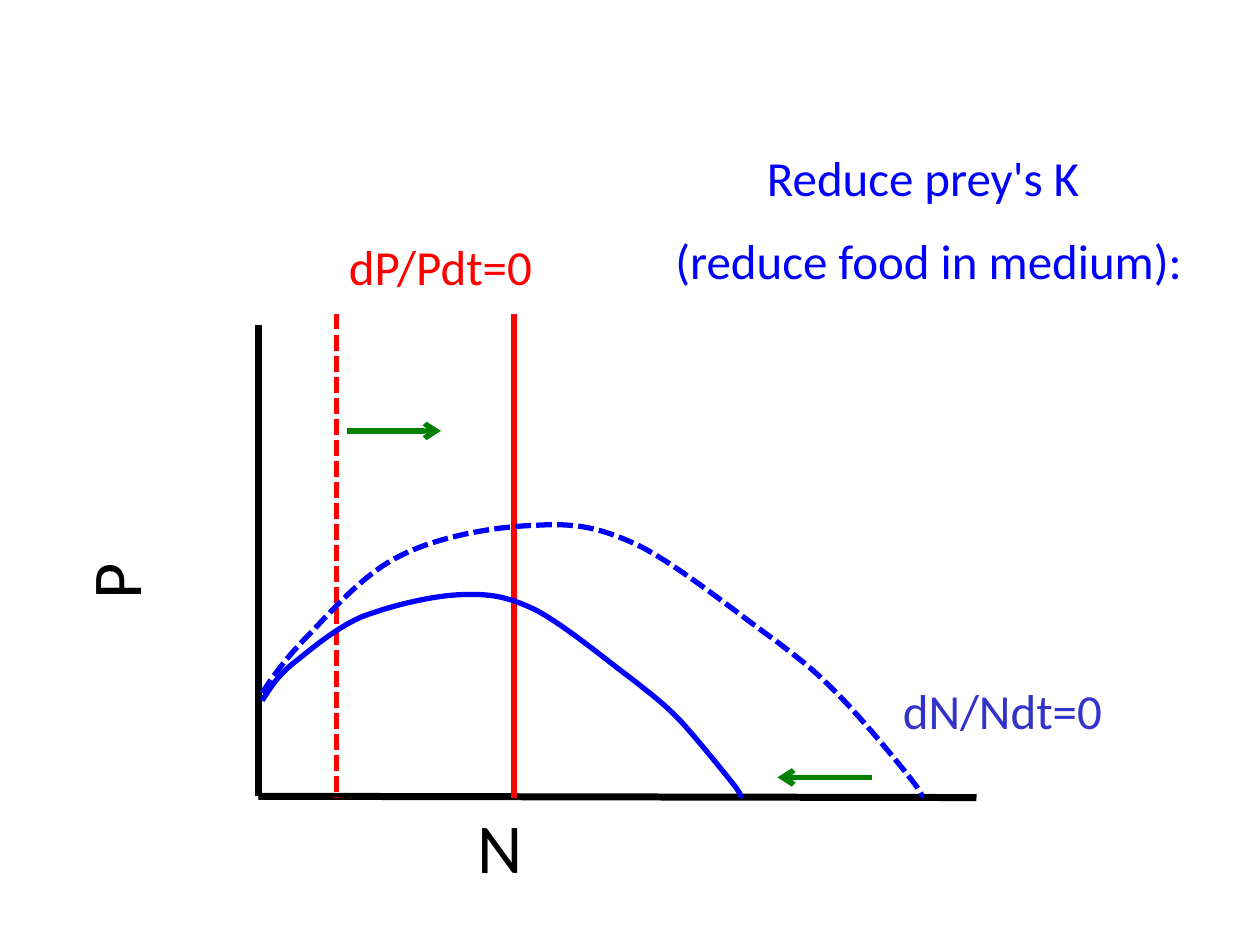
import lxml.etree
import pptx
import pptx.dml.color
import pptx.enum.dml
import pptx.enum.shapes
import pptx.enum.text
import pptx.oxml.ns
import pptx.util

PX = 9144
FONT = "Calibri"
COLORS = {"axis": "000000", "predator": "FF0000", "prey": "0000FF",
          "prey_label": "3333CC", "shift": "008000"}
ALIGN = pptx.enum.text.PP_ALIGN
DASH = pptx.enum.dml.MSO_LINE.SQUARE_DOT
qn = pptx.oxml.ns.qn

OLD_PREY = [(3, 83), (11, 95), (19, 107), (36, 125), (54, 143), (81, 176), (111, 191),
            (141, 207), (187, 215), (219, 216), (251, 218), (270, 215), (302, 200),
            (334, 184), (383, 144), (410, 125), (436, 105), (441, 101), (459, 83),
            (477, 65), (506, 30), (517, 16), (528, 2), (527, 1), (526, 0)]
NEW_PREY = [(3, 77), (9, 86), (14, 95), (27, 106), (40, 116), (59, 133), (81, 143),
            (104, 152), (137, 160), (160, 161), (183, 162), (197, 160), (220, 149),
            (243, 137), (279, 107), (298, 93), (317, 78), (321, 75), (334, 62),
            (347, 48), (368, 22), (376, 12), (384, 2), (383, 1), (382, 0)]


def rgb(name):
    """Return the named colour."""
    return pptx.dml.color.RGBColor.from_string(COLORS[name])


def add_text(shapes, text, box, size=28, color="axis", align=ALIGN.LEFT,
             wrap=True, spacing=None, before=14, rotation=0):
    """Add a text box with one paragraph for each line of text."""
    sp = shapes.add_textbox(*(v * PX for v in box))
    sp.rotation = rotation
    tf = sp.text_frame
    tf.word_wrap = wrap
    tf.auto_size = pptx.enum.text.MSO_AUTO_SIZE.SHAPE_TO_FIT_TEXT
    for i, line in enumerate(text.split("\n")):
        p = tf.paragraphs[0] if i == 0 else tf.add_paragraph()
        p.alignment = align
        if spacing:
            p.line_spacing = spacing
        if i:
            p.space_before = pptx.util.Pt(before)
        r = p.add_run()
        r.text = line
        r.font.name = FONT
        r.font.size = pptx.util.Pt(size)
        r.font.color.rgb = rgb(color)
    return sp


def style_line(line, color, width, dash):
    """Set the colour, width and dash of a line."""
    line.color.rgb = rgb(color)
    line.width = pptx.util.Pt(width)
    if dash:
        line.dash_style = dash


def add_line(shapes, start, end, color, width=3, dash=None, arrow=False):
    """Add a straight line, with an arrowhead at its end if asked."""
    sp = shapes.add_connector(pptx.enum.shapes.MSO_CONNECTOR.STRAIGHT,
                              *(v * PX for v in start + end))
    style_line(sp.line, color, width, dash)
    if arrow:
        lxml.etree.SubElement(sp.line._get_or_add_ln(), qn("a:tailEnd"), type="arrow")
    lxml.etree.SubElement(sp.element.spPr, qn("a:effectLst"))
    return sp


def add_curve(shapes, points, color, width=3, dash=None):
    """Add an open Bezier curve: a start, then two controls and an end per piece."""
    builder = shapes.build_freeform(*points[0], scale=PX)
    builder.add_line_segments(points[1:], close=False)
    sp = builder.convert_to_shape()
    sp.shadow.inherit = False
    sp.fill.background()
    style_line(sp.line, color, width, dash)
    outline = next(sp.element.iter(qn("a:path")))
    segments = outline.findall(qn("a:lnTo"))
    for i in range(0, len(segments), 3):
        piece = lxml.etree.SubElement(outline, qn("a:cubicBezTo"))
        for segment in segments[i:i + 3]:
            piece.append(segment[0])
            outline.remove(segment)
    return sp


def add_axes(shapes, left, top, width, height):
    """Add the two axes and their letters as one group."""
    axes = shapes.add_group_shape().shapes
    bottom = top + height
    add_line(axes, (left, top + 9), (left, bottom - 1), "axis", 4)
    add_line(axes, (left, bottom - 1), (left + width, bottom), "axis", 4)
    letter = dict(size=40, wrap=False, spacing=1.15)
    add_text(axes, "N", (left + 164, bottom - 10, 64, 87), **letter)
    add_text(axes, "P", (left - 146, top + 168, 52, 86), rotation=270, **letter)


def add_phase_plane(shapes, left, top, width, height):
    """Add the axes, both pairs of isoclines, their labels and the shift arrows."""
    bottom = top + height
    add_axes(shapes, left, top, width, height)
    add_text(shapes, "dN/Ndt=0", (left + 453, bottom - 98, 275, 57),
             color="prey_label", align=ALIGN.CENTER)
    add_text(shapes, "dP/Pdt=0", (left + 62, top - 66, 275, 57), color="predator")
    for x, dash in ((62, DASH), (203, None)):
        add_line(shapes, (left + x, top), (left + x, bottom), "predator", dash=dash)
    for points, dash in ((OLD_PREY, DASH), (NEW_PREY, None)):
        add_curve(shapes, [(left + x, bottom - y) for x, y in points], "prey", dash=dash)
    for x, y, length in ((70, 93, 75), (487, 368, -75)):
        add_line(shapes, (left + x, top + y), (left + x + length, top + y),
                 "shift", arrow=True)


def main():
    """Build the slide and save it."""
    prs = pptx.Presentation()
    prs.slide_width, prs.slide_height = 1000 * PX, 750 * PX
    shapes = prs.slides.add_slide(prs.slide_layouts[6]).shapes
    add_phase_plane(shapes, 205, 249, 570, 384)
    add_text(shapes, "Reduce prey's K \n(reduce food in medium):", (508, 112, 458, 128),
             color="prey", align=ALIGN.CENTER)
    prs.save("out.pptx")


if __name__ == "__main__":
    main()
